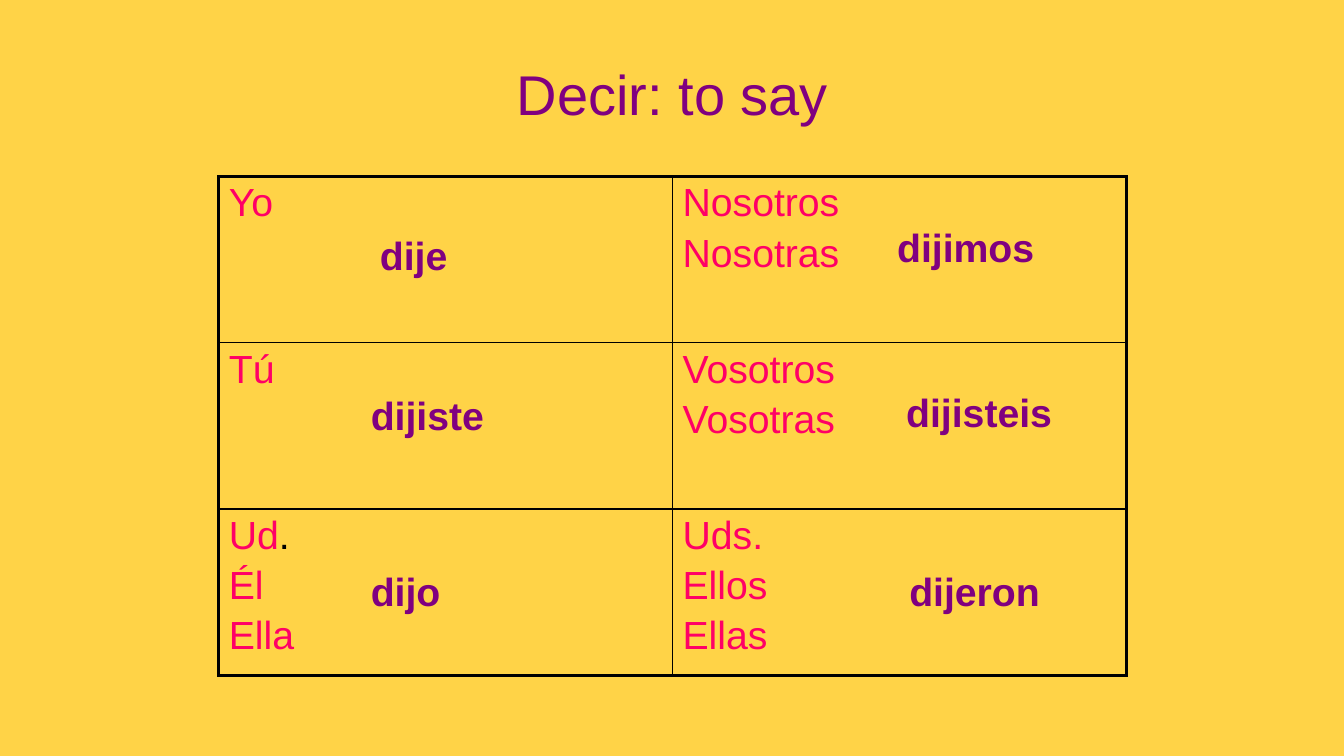
from dataclasses import dataclass

from lxml.etree import SubElement
from pptx import Presentation
from pptx.dml.color import RGBColor
from pptx.enum.text import MSO_ANCHOR, PP_ALIGN
from pptx.oxml.ns import qn
from pptx.util import Pt


@dataclass(frozen=True)
class Theme:
    font: str = "Arial"
    background: str = "FFD347"
    verb: str = "800080"
    pronoun: str = "FF0066"
    ink: str = "000000"
    title_size: int = 40
    body_size: int = 28
    outer_line: float = 2.25
    inner_line: float = 1
    paragraph_gap: float = 4.6


theme = Theme()
PX = 9144


def style(span, size, color, bold=False):
    span.font.name = theme.font
    span.font.size = Pt(size)
    span.font.bold = bold
    span.font.color.rgb = RGBColor.from_string(color)


def add_text(page, text, bounds, size, bold=False):
    box = page.shapes.add_textbox(*(length * PX for length in bounds))
    box.text_frame.word_wrap = True
    box.text_frame.text = text
    style(box.text_frame.paragraphs[0].runs[0], size, theme.verb, bold)
    return box


deck = Presentation()
deck.slide_width = 1333 * PX
deck.slide_height = 750 * PX
page = deck.slides.add_slide(deck.slide_layouts[6])
page.background.fill.solid()
page.background.fill.fore_color.rgb = RGBColor.from_string(theme.background)

title = add_text(page, "Decir: to say", (67, 30, 1200, 125), theme.title_size)
title.text_frame.vertical_anchor = MSO_ANCHOR.MIDDLE
title.text_frame.paragraphs[0].alignment = PP_ALIGN.CENTER

pronouns = [
    ["Yo", "Nosotros\nNosotras"],
    ["Tú", "Vosotros\nVosotras"],
    ["Ud.\nÉl\nElla", "Uds.\nEllos\nEllas"],
]
row_count, column_count = len(pronouns), len(pronouns[0])
column_width, row_height = 450, 165
table = page.shapes.add_table(
    row_count, column_count, 217 * PX, 175 * PX,
    column_count * column_width * PX, row_count * row_height * PX,
).table
table.first_row = False
table.horz_banding = False
for column in table.columns:
    column.width = column_width * PX
for row in table.rows:
    row.height = row_height * PX

for row_index, row_pronouns in enumerate(pronouns):
    for column_index, text in enumerate(row_pronouns):
        cell = table.cell(row_index, column_index)
        cell.text_frame.text = text
        for position, para in enumerate(cell.text_frame.paragraphs):
            para.space_before = Pt(theme.paragraph_gap if position else 0)
            style(para.runs[0], theme.body_size, theme.pronoun)

        outer_edges = {
            "a:lnL": column_index == 0,
            "a:lnR": column_index == column_count - 1,
            "a:lnT": row_index == 0,
            "a:lnB": row_index == row_count - 1,
        }
        properties = cell._tc.get_or_add_tcPr()
        for edge, is_outer in outer_edges.items():
            width = theme.outer_line if is_outer else theme.inner_line
            line = SubElement(properties, qn(edge), w=str(Pt(width)))
            fill = SubElement(line, qn("a:solidFill"))
            SubElement(fill, qn("a:srgbClr"), val=theme.ink)
        cell.fill.background()

usted = table.cell(2, 0).text_frame.paragraphs[0]
usted.runs[0].text = "Ud"
period = usted.add_run()
period.text = "."
style(period, theme.body_size, theme.ink)

verbs = [
    ("dije", 367, 225, 227),
    ("dijiste", 358, 383, 227),
    ("dijo", 358, 558, 203),
    ("dijimos", 880, 217, 200),
    ("dijeron", 892, 558, 212),
    ("dijisteis", 889, 380, 200),
]
for verb, left, top, width in verbs:
    add_text(page, verb, (left, top, width, 57), theme.body_size, bold=True)

deck.save("out.pptx")
